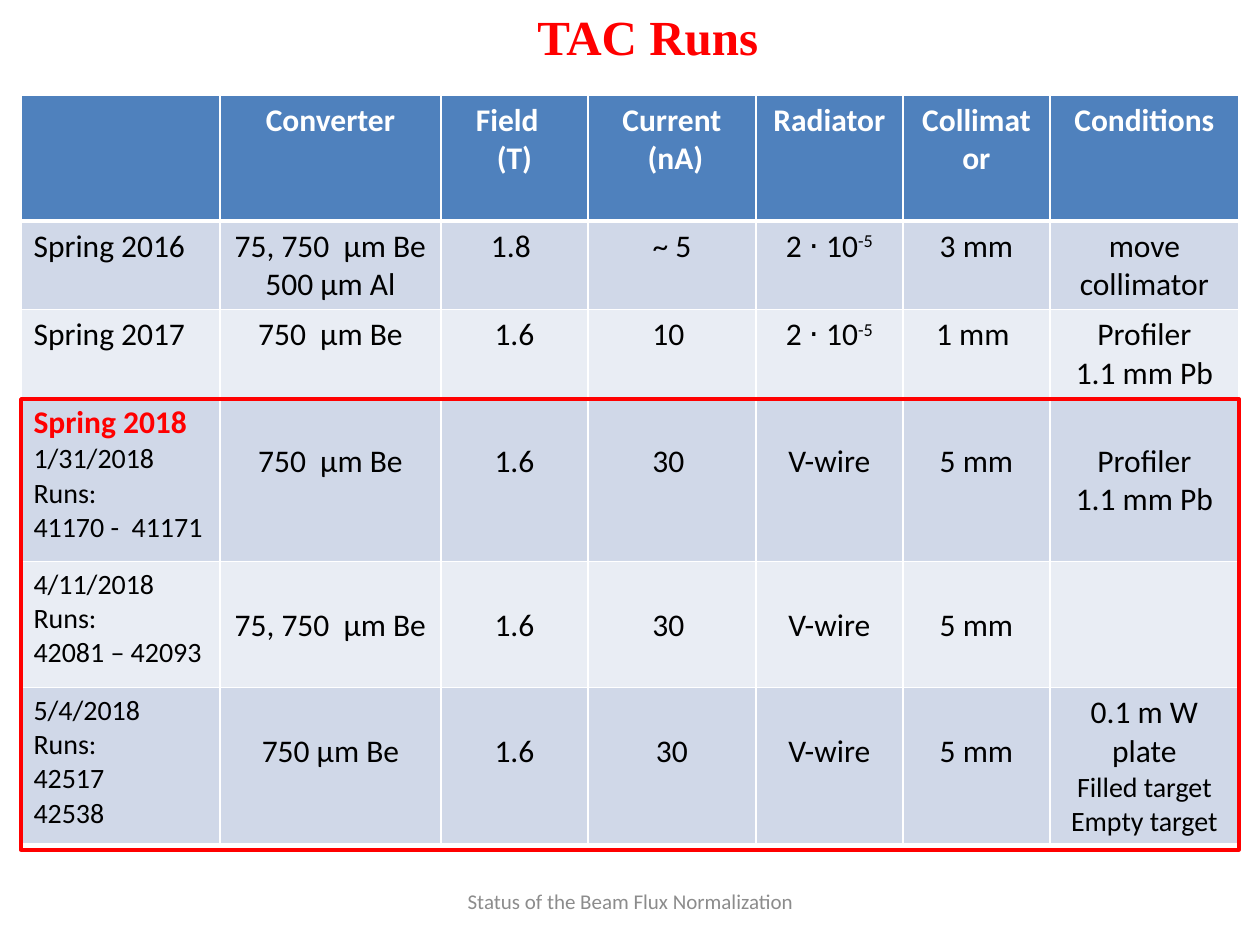
"""Build the TAC Runs summary slide."""
from dataclasses import dataclass

from lxml import etree
from pptx import Presentation
from pptx.dml.color import RGBColor
from pptx.enum.shapes import MSO_SHAPE
from pptx.enum.text import MSO_ANCHOR, PP_ALIGN
from pptx.oxml.ns import qn
from pptx.util import Emu, Pt

EMU_PER_PX = 914400 / 126
LEFT, CENTER = PP_ALIGN.LEFT, PP_ALIGN.CENTER
TOP, MIDDLE = MSO_ANCHOR.TOP, MSO_ANCHOR.MIDDLE
RECTANGLE = MSO_SHAPE.RECTANGLE

RED = RGBColor(0xFF, 0x00, 0x00)
BLACK = RGBColor(0x00, 0x00, 0x00)
WHITE = RGBColor(0xFF, 0xFF, 0xFF)
GRAY = RGBColor(0x8C, 0x8C, 0x8C)
HEADER_BLUE = RGBColor(0x4F, 0x81, 0xBD)
ROW_FILLS = (RGBColor(0xE9, 0xED, 0xF4), RGBColor(0xD0, 0xD8, 0xE8))

COLUMN_WIDTHS = (199, 221, 147, 168, 147, 147, 189)
ROW_HEIGHTS = (126, 88, 88, 164, 126, 156)
LOWERED_MARGIN = 45


@dataclass(frozen=True)
class Line:
    """One paragraph, with an optional superscript ending."""
    text: str
    size: int = 18
    color: RGBColor = BLACK
    bold: bool = False
    font: str = "Calibri"
    superscript: str = ""


@dataclass(frozen=True)
class Entry:
    """The content of one table cell."""
    lines: tuple[Line, ...] = ()
    lowered: bool = False


@dataclass(frozen=True)
class Label:
    """A text box outside the table."""
    line: Line
    box: tuple[int, int, int, int]
    align: PP_ALIGN
    anchor: MSO_ANCHOR
    wrap: bool


def entry(*texts: str, lowered: bool = False, **style) -> Entry:
    """Make an entry whose lines share one style."""
    return Entry(tuple(Line(text, **style) for text in texts), lowered)


def lowered(*texts: str) -> Entry:
    """Make an entry that starts one line down."""
    return entry(*texts, lowered=True)


def header(*texts: str) -> Entry:
    """Make a column heading."""
    return entry(*texts, color=WHITE, bold=True)


RADIATOR = Entry((Line("2 ⋅ 10", superscript="-5"),))
SPRING_2018 = Entry((
    Line("Spring 2018", color=RED, bold=True),
    *entry("1/31/2018", "Runs:", "41170 -  41171", size=16).lines,
))
TARGETS = Entry((
    Line("0.1 m W plate"),
    *entry("Filled target", "Empty target", size=16).lines,
))
RUNS = (
    (Entry(), header("Converter"), header("Field  ", "(T)"),
     header("Current", " (nA)"), header("Radiator"), header("Collimator"),
     header("Conditions")),
    (entry("Spring 2016"), entry("75, 750  μm Be", "500 μm Al"),
     entry("1.8 "), entry(" ~ 5 "), RADIATOR, entry("3 mm"),
     entry("move collimator")),
    (entry("Spring 2017"), entry("750  μm Be"), entry("1.6"), entry("10 "),
     RADIATOR, entry("1 mm "), entry("Profiler", "1.1 mm Pb")),
    (SPRING_2018, lowered("750  μm Be"), lowered("1.6"), lowered("30 "),
     lowered("V-wire"), lowered("5 mm"), lowered("Profiler", "1.1 mm Pb")),
    (entry("4/11/2018", "Runs:", "42081 – 42093", size=16),
     lowered("75, 750  μm Be"), lowered("1.6"), lowered("30 "),
     lowered("V-wire"), lowered("5 mm"), Entry()),
    (entry("5/4/2018", "Runs:", "42517", "42538", size=16),
     lowered("750 μm Be"), lowered("1.6"), lowered("30"),
     lowered("V-wire"), lowered("5 mm"), TARGETS),
)
LABELS = (
    Label(Line("TAC Runs", 28, RED, True, "Times New Roman"),
          (525, 0, 248, 72), LEFT, TOP, False),
    Label(Line("Status of the Beam Flux Normalization", 12, GRAY),
          (431, 876, 399, 50), CENTER, MIDDLE, True),
)


def px(length: int) -> Emu:
    """Turn pixels into EMU."""
    return Emu(round(length * EMU_PER_PX))


def add_run(paragraph, text: str, line: Line):
    """Add a run formatted as its line asks."""
    run = paragraph.add_run()
    run.text = text
    formats = {"size": Pt(line.size), "bold": line.bold, "name": line.font}
    for attribute, value in formats.items():
        setattr(run.font, attribute, value)
    run.font.color.rgb = line.color
    return run


def write_lines(frame, lines: tuple[Line, ...], align: PP_ALIGN) -> None:
    """Fill a text frame with one paragraph per line."""
    for index, line in enumerate(lines):
        paragraph = frame.add_paragraph() if index else frame.paragraphs[0]
        paragraph.alignment = align
        add_run(paragraph, line.text, line)
        if line.superscript:
            raised = add_run(paragraph, line.superscript, line)
            raised.font._element.set("baseline", "30000")


def add_borders(cell, widths: dict[str, int]) -> None:
    """Give a cell white borders of the given point widths."""
    properties = cell._tc.get_or_add_tcPr()
    for side, width in widths.items():
        border = etree.SubElement(properties, qn(f"a:{side}"), w=str(Pt(width)))
        fill = etree.SubElement(border, qn("a:solidFill"))
        etree.SubElement(fill, qn("a:srgbClr"), val=str(WHITE))


def add_runs_table(slide) -> None:
    """Draw the table of runs."""
    table = slide.shapes.add_table(
        len(ROW_HEIGHTS), len(COLUMN_WIDTHS), px(21), px(95),
        px(sum(COLUMN_WIDTHS)), px(sum(ROW_HEIGHTS))).table
    for column, width in zip(table.columns, COLUMN_WIDTHS):
        column.width = px(width)
    for row, height in zip(table.rows, ROW_HEIGHTS):
        row.height = px(height)
    for r, season in enumerate(RUNS):
        for c, content in enumerate(season):
            cell = table.cell(r, c)
            add_borders(cell, {"lnL": 1, "lnR": 1, "lnT": 3 if r == 1 else 1,
                               "lnB": 3 if r == 0 else 1})
            cell.fill.solid()
            cell.fill.fore_color.rgb = ROW_FILLS[r % 2] if r else HEADER_BLUE
            if content.lowered:
                cell.margin_top = px(LOWERED_MARGIN)
            write_lines(cell.text_frame, content.lines,
                        CENTER if c else LEFT)


def add_label(slide, label: Label) -> None:
    """Draw a text box."""
    frame = slide.shapes.add_textbox(*map(px, label.box)).text_frame
    formats = {"word_wrap": label.wrap, "vertical_anchor": label.anchor}
    for attribute, value in formats.items():
        setattr(frame, attribute, value)
    write_lines(frame, (label.line,), label.align)


def add_highlight(slide) -> None:
    """Frame the 2018 runs in red."""
    highlight = slide.shapes.add_shape(
        RECTANGLE, px(21), px(399), px(sum(COLUMN_WIDTHS)), px(451))
    highlight.shadow.inherit = False
    highlight.fill.background()
    highlight.line.color.rgb = RED
    highlight.line.width = Pt(2)


def main() -> None:
    """Build and save the slide."""
    deck = Presentation()
    deck.slide_width, deck.slide_height = px(1260), px(945)
    slide = deck.slides.add_slide(deck.slide_layouts[6])
    for label in LABELS:
        add_label(slide, label)
    add_runs_table(slide)
    add_highlight(slide)
    deck.save("out.pptx")


if __name__ == "__main__":
    main()
